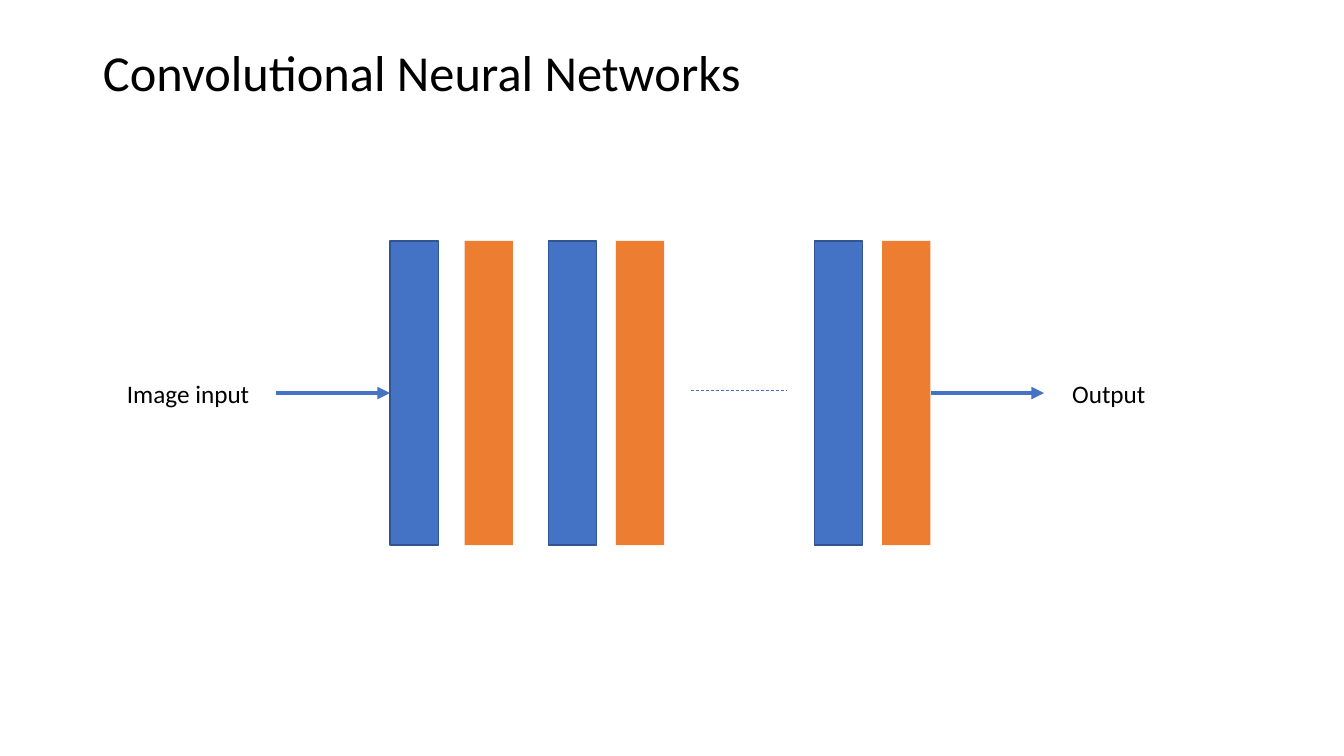
"""Build a slide that shows the layer structure of a convolutional neural network."""
from dataclasses import dataclass

from lxml.etree import SubElement
from pptx import Presentation
from pptx.dml.color import RGBColor
from pptx.enum.dml import MSO_LINE_DASH_STYLE as DashStyle
from pptx.enum.shapes import MSO_CONNECTOR as ConnectorKind, MSO_SHAPE as ShapeKind
from pptx.enum.text import MSO_ANCHOR as Anchor, MSO_AUTO_SIZE as AutoSize, PP_ALIGN as Align
from pptx.oxml.ns import qn
from pptx.slide import Slide
from pptx.text.text import TextFrame
from pptx.util import Cm, Pt

FONT = "Calibri"
BLACK, BLUE, DARK_BLUE, ORANGE = "000000", "4472C4", "325491", "ED7D31"
LAYER_TOP, LAYER_WIDTH, LAYER_HEIGHT = 6.07, 1.22, 7.67
FLOW_Y = LAYER_TOP + LAYER_HEIGHT / 2


@dataclass(frozen=True)
class Layer:
    left: float
    fill: str
    outline: str | None = None


@dataclass(frozen=True)
class FlowLine:
    start: float
    end: float
    y: float = FLOW_Y
    weight: float = 3
    dotted: bool = False


@dataclass(frozen=True)
class Label:
    text: str
    left: float
    width: float


LAYERS = [
    Layer(9.83, BLUE, DARK_BLUE),
    Layer(11.71, ORANGE),
    Layer(13.82, BLUE, DARK_BLUE),
    Layer(15.52, ORANGE),
    Layer(20.52, BLUE, DARK_BLUE),
    Layer(22.23, ORANGE),
]
FLOW_LINES = [
    FlowLine(6.96, LAYERS[0].left),
    FlowLine(17.42, 19.84, y=9.83, weight=0.5, dotted=True),
    FlowLine(LAYERS[-1].left + LAYER_WIDTH, 26.31),
]
LABELS = [Label("Image input", 2.95, 3.63), Label("Output", 26.77, 2.39)]


def colour(value: str) -> RGBColor:
    return RGBColor.from_string(value)


def write(frame: TextFrame, text: str, size: float) -> None:
    frame.text = text
    para = frame.paragraphs[0]
    para.alignment = Align.LEFT
    font = para.runs[0].font
    font.name, font.size = FONT, Pt(size)
    font.color.rgb = colour(BLACK)


def draw_title(page: Slide, text: str) -> None:
    title = page.shapes.title
    title.left, title.top, title.width, title.height = Cm(2.34), Cm(0.05), Cm(29.21), Cm(3.68)
    frame = title.text_frame
    write(frame, text, 36)
    frame.auto_size = AutoSize.NONE
    frame.vertical_anchor = Anchor.MIDDLE
    frame.paragraphs[0].line_spacing = 0.9


def draw_layer(page: Slide, layer: Layer) -> None:
    box = page.shapes.add_shape(
        ShapeKind.RECTANGLE, Cm(layer.left), Cm(LAYER_TOP), Cm(LAYER_WIDTH), Cm(LAYER_HEIGHT)
    )
    box.shadow.inherit = False
    box.fill.solid()
    box.fill.fore_color.rgb = colour(layer.fill)
    if layer.outline:
        box.line.color.rgb = colour(layer.outline)
        box.line.width = Pt(1)
    else:
        box.line.fill.background()


def draw_flow_line(page: Slide, flow: FlowLine) -> None:
    connector = page.shapes.add_connector(
        ConnectorKind.STRAIGHT, Cm(flow.start), Cm(flow.y), Cm(flow.end), Cm(flow.y)
    )
    connector.line.color.rgb = colour(BLUE)
    connector.line.width = Pt(flow.weight)
    if flow.dotted:
        connector.line.dash_style = DashStyle.DASH
    else:
        SubElement(connector.line._get_or_add_ln(), qn("a:tailEnd"), type="triangle")
    SubElement(connector._element.spPr, qn("a:effectLst"))


def draw_label(page: Slide, label: Label) -> None:
    box = page.shapes.add_textbox(Cm(label.left), Cm(9.4), Cm(label.width), Cm(1.02))
    frame = box.text_frame
    frame.word_wrap = False
    frame.auto_size = AutoSize.SHAPE_TO_FIT_TEXT
    write(frame, label.text, 18)


def main() -> None:
    deck = Presentation()
    deck.slide_width, deck.slide_height = Cm(33.87), Cm(19.05)
    page = deck.slides.add_slide(deck.slide_layouts.get_by_name("Title Only"))
    draw_title(page, "Convolutional Neural Networks")
    for layer in LAYERS:
        draw_layer(page, layer)
    for flow in FLOW_LINES:
        draw_flow_line(page, flow)
    for label in LABELS:
        draw_label(page, label)
    deck.save("out.pptx")


if __name__ == "__main__":
    main()
